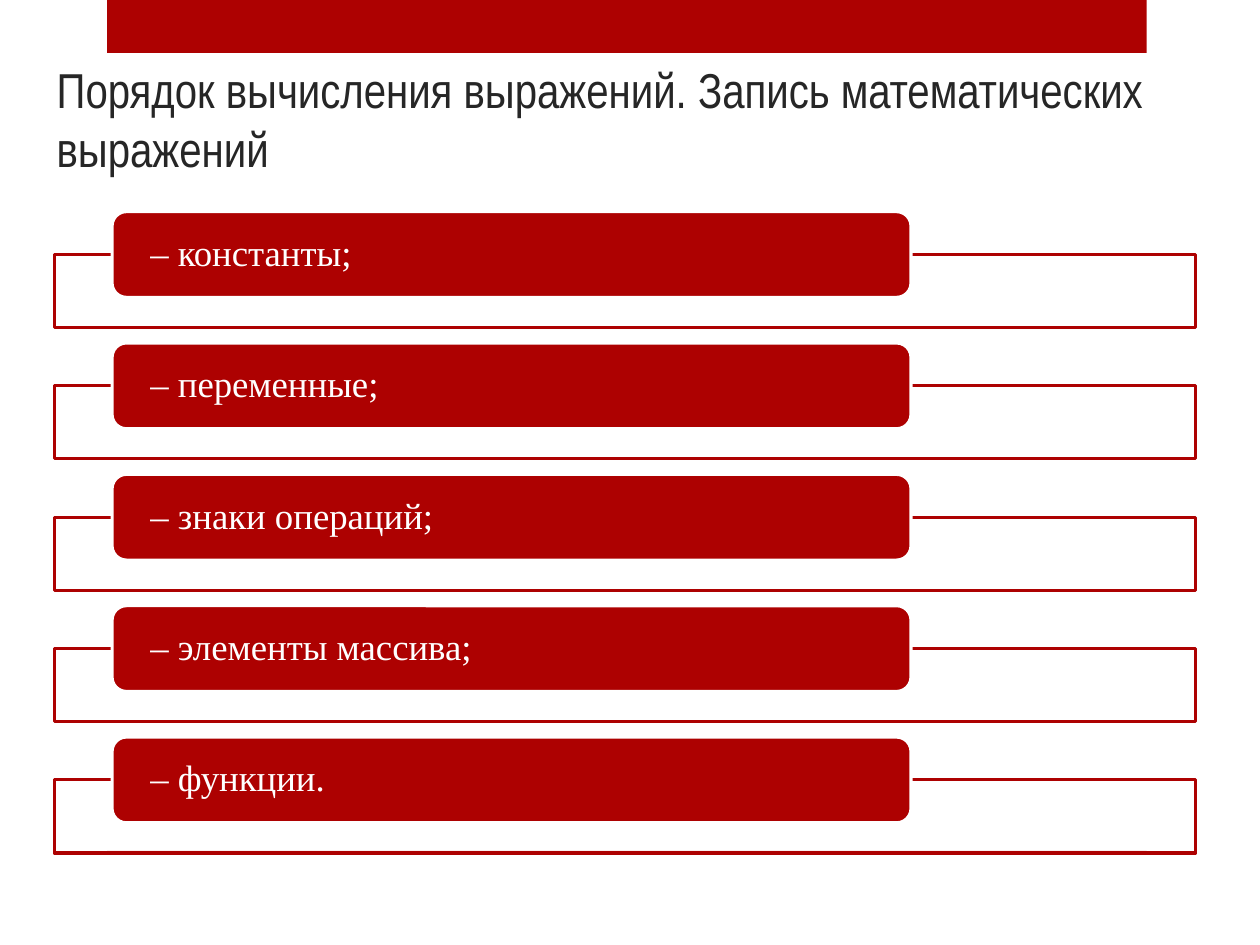
from lxml import etree
from pptx import Presentation
from pptx.dml.color import RGBColor
from pptx.enum import shapes, text
from pptx.oxml import ns
from pptx.util import Inches, Pt

TITLE = "Порядок вычисления выражений. Запись математических выражений"
ITEMS = [
    "– константы;",
    "– переменные;",
    "– знаки операций;",
    "– элементы массива;",
    "– функции.",
]
RED, WHITE, DARK = "AD0101", "FFFFFF", "262626"
BANDS = [(0.85, 0, 8.25, 0.42), (0.85, 6.75, 8.25, 0.03)]
FIRST_TOP, STEP, FRAME_DROP = 1.68, 1.0425, 0.34


def paint(color_format, color):
    color_format.rgb = RGBColor.from_string(color)


def add_box(page, kind, place, fill, line=None):
    box = page.shapes.add_shape(kind, *map(Inches, place))
    box.shadow.inherit = False
    box.fill.solid()
    paint(box.fill.fore_color, fill)
    if line:
        box.line.width = Pt(1.75)
        paint(box.line.color, line)
    else:
        box.line.fill.background()
    return box


def set_opacity(box, percent):
    color = box._element.spPr.find(ns.qn("a:solidFill"))[0]
    etree.SubElement(color, ns.qn("a:alpha"), val=str(percent * 1000))


def add_span(para, words, font, size, color):
    span = para.add_run()
    span.text = words
    span.font.name = font
    span.font.size = Pt(size)
    paint(span.font.color, color)


def add_title(page):
    title = page.shapes.title
    title.left, title.top, title.width, title.height = map(
        Inches, (0.35, 0.36, 9.37, 1.1))
    frame = title.text_frame
    frame.word_wrap = True
    frame.auto_size = text.MSO_AUTO_SIZE.NONE
    frame.vertical_anchor = text.MSO_ANCHOR.BOTTOM
    para = frame.paragraphs[0]
    para.alignment = text.PP_ALIGN.LEFT
    add_span(para, TITLE, "Arial Narrow", 28, DARK)


def add_item(page, top, words):
    outline = add_box(page, shapes.MSO_SHAPE.RECTANGLE,
                      (0.43, top + FRAME_DROP, 9.06, 0.58), WHITE, RED)
    set_opacity(outline, 90)
    label = add_box(page, shapes.MSO_SHAPE.ROUNDED_RECTANGLE,
                    (0.89, top, 6.34, 0.68), RED, WHITE)
    frame = label.text_frame
    frame.word_wrap = True
    frame.vertical_anchor = text.MSO_ANCHOR.MIDDLE
    frame.margin_left = frame.margin_right = Inches(0.27)
    frame.margin_top = frame.margin_bottom = 0
    para = frame.paragraphs[0]
    para.alignment = text.PP_ALIGN.LEFT
    para.line_spacing = 0.9
    add_span(para, words, "Times New Roman", 21, WHITE)


def main():
    deck = Presentation()
    deck.slide_width, deck.slide_height = Inches(10), Inches(7.5)
    page = deck.slides.add_slide(deck.slide_layouts[5])
    for place in BANDS:
        add_box(page, shapes.MSO_SHAPE.RECTANGLE, place, RED)
    add_title(page)
    for index, words in enumerate(ITEMS):
        add_item(page, FIRST_TOP + index * STEP, words)
    deck.save("out.pptx")


if __name__ == "__main__":
    main()
